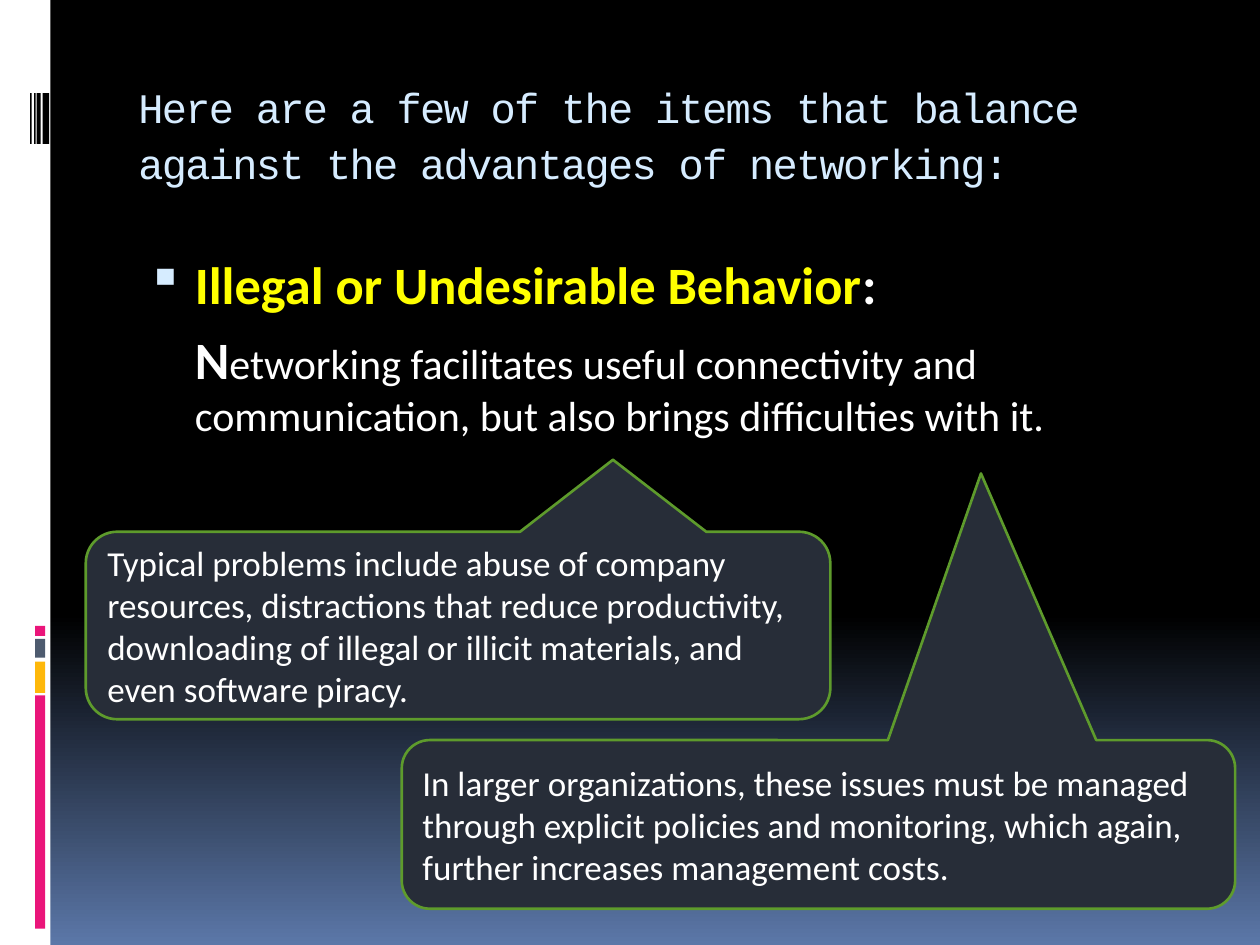
import copy
import lxml.etree
import pptx
import pptx.dml.color
import pptx.enum.shapes
import pptx.enum.text
import pptx.oxml.ns
import pptx.util
from dataclasses import dataclass

Cm, Pt = pptx.util.Cm, pptx.util.Pt
RGB = pptx.dml.color.RGBColor.from_string
SHAPE = pptx.enum.shapes.MSO_SHAPE
ANCHOR = pptx.enum.text.MSO_ANCHOR
ALIGN = pptx.enum.text.PP_ALIGN
qn = pptx.oxml.ns.qn


@dataclass(frozen=True)
class Theme:
    black: str = "000000"
    white: str = "FFFFFF"
    sky: str = "D6ECFF"
    yellow: str = "FFFF00"
    pink: str = "EA157A"
    amber: str = "FEB80A"
    slate: str = "4E5B6F"
    blue: str = "5B77A8"
    panel: str = "272D38"
    green: str = "5E9B2C"
    title_font: str = "Courier New"
    body_font: str = "Calibri"
    heading: int = 30
    body: int = 24
    note: int = 20


class SlideBuilder:
    def __init__(self, prs, theme):
        self.theme = theme
        self.s = prs.slides.add_slide(prs.slide_layouts[6])

    def background(self, stops, angle):
        fill = self.s.background.fill
        fill.gradient()
        fill.gradient_angle = angle
        gs_list = self.s._element.xpath(".//a:gsLst")[0]
        while len(gs_list) < len(stops):
            gs_list.append(copy.deepcopy(gs_list[0]))
        for stop, (position, color) in zip(fill.gradient_stops, stops):
            stop.position = position
            stop.color.rgb = RGB(color)

    def shape(self, kind, box, fill, line=None):
        sp = self.s.shapes.add_shape(kind, *map(Cm, box))
        sp.shadow.inherit = False
        sp.fill.solid()
        sp.fill.fore_color.rgb = RGB(fill)
        if line:
            sp.line.color.rgb = RGB(line)
            sp.line.width = Pt(1.5)
        else:
            sp.line.fill.background()
        return sp

    def bar(self, x, y, w, h, color):
        self.shape(SHAPE.RECTANGLE, (x, y, w, h), color)

    def text_box(self, box):
        tf = self.s.shapes.add_textbox(*map(Cm, box)).text_frame
        tf.word_wrap = True
        return tf

    def paragraph(self, p, runs, spacing=None, **formats):
        for name, value in {"alignment": ALIGN.LEFT, **formats}.items():
            setattr(p, name, value)
        for text, size, color, bold, font in runs:
            r = p.add_run()
            r.text = text
            for name, value in {"size": Pt(size), "bold": bold, "name": font}.items():
                setattr(r.font, name, value)
            r.font.color.rgb = RGB(color)
            if spacing:
                r._r.get_or_add_rPr().set("spc", str(spacing))

    def indent(self, p, left, first=0.0, bullet=None):
        pPr = p._p.get_or_add_pPr()
        pPr.set("marL", str(Cm(left)))
        pPr.set("indent", str(Cm(first)))
        if bullet:
            color = lxml.etree.SubElement(pPr, qn("a:buClr"))
            lxml.etree.SubElement(color, qn("a:srgbClr"), val=self.theme.sky)
            lxml.etree.SubElement(pPr, qn("a:buSzPct"), val="95000")
            lxml.etree.SubElement(pPr, qn("a:buChar"), char=bullet)

    def callout(self, box, tip, text):
        t = self.theme
        sp = self.shape(SHAPE.ROUNDED_RECTANGULAR_CALLOUT, box, t.panel, t.green)
        for i, value in enumerate((*tip, 0.167)):
            sp.adjustments[i] = value
        tf = sp.text_frame
        for name, value in {"word_wrap": True, "vertical_anchor": ANCHOR.MIDDLE}.items():
            setattr(tf, name, value)
        self.paragraph(tf.paragraphs[0], [(text, t.note, t.white, False, t.body_font)])


def main():
    """Build the slide on the drawbacks of networking and save it."""
    prs = pptx.Presentation()
    prs.slide_width, prs.slide_height = Cm(25.4), Cm(19.05)
    t = Theme()
    b = SlideBuilder(prs, t)
    b.background([(0, t.black), (0.65, t.black), (1, t.blue)], 270)

    b.bar(0, 0, 1.02, 19.05, t.white)
    for y, h, color in ((14.02, 4.7, t.pink), (13.34, 0.63, t.amber),
                        (12.88, 0.38, t.slate), (12.62, 0.2, t.pink)):
        b.bar(0.71, y, 0.2, h, color)
    for x, w in ((0.86, 0.13), (0.74, 0.08), (0.69, 0.03), (0.61, 0.03)):
        b.bar(x, 1.88, w, 1.02, t.black)

    title = "Here are a few of the items that balance against the advantages of networking:"
    tf = b.text_box((2.54, 1.42, 21.59, 2.54))
    b.paragraph(tf.paragraphs[0], [(title, t.body, t.sky, False, t.title_font)],
                spacing=-100, line_spacing=1.1)

    tf = b.text_box((2.54, 4.95, 21.59, 12.7))
    p = tf.paragraphs[0]
    b.paragraph(p, [("Illegal or Undesirable Behavior", t.heading, t.yellow, True, t.body_font),
                    (":", t.heading, t.white, True, t.body_font)], space_before=Pt(7))
    b.indent(p, 1.14, -0.97, "▪")
    p = tf.add_paragraph()
    b.paragraph(p, [("N", t.heading, t.white, True, t.body_font),
                    ("etworking facilitates useful connectivity and communication, "
                     "but also brings difficulties with it.",
                     t.body, t.white, False, t.body_font)], space_before=Pt(7))
    b.indent(p, 1.14)

    b.callout((1.73, 10.72, 15.01, 3.78), (0.208, -0.884),
              "Typical problems include abuse of company resources, distractions that "
              "reduce productivity, downloading of illegal or illicit materials, and "
              "even software piracy.")
    b.callout((8.1, 14.92, 16.8, 3.4), (0.195, -2.081),
              "In larger organizations, these issues must be managed through explicit "
              "policies and monitoring, which again, further increases management costs.")
    prs.save("out.pptx")


if __name__ == "__main__":
    main()
